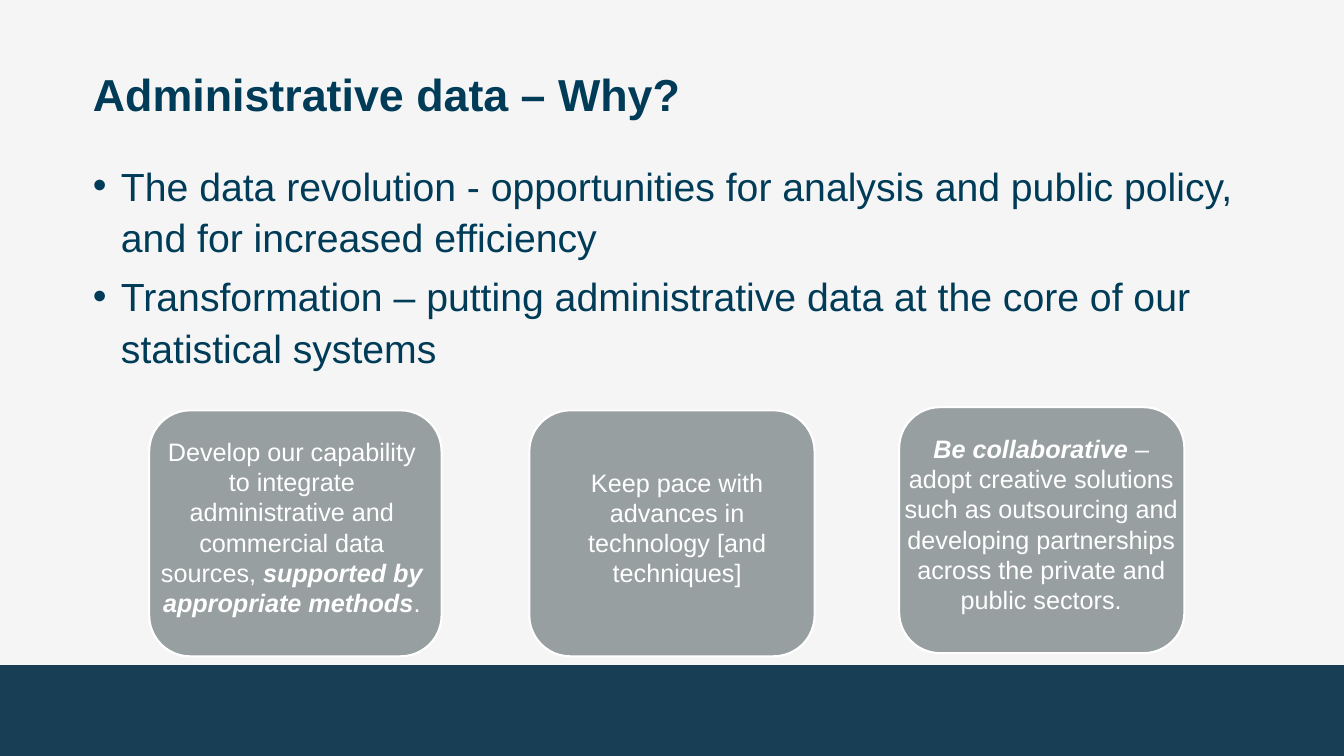
from lxml import etree
from pptx import Presentation
from pptx.dml.color import RGBColor
from pptx.enum.shapes import MSO_SHAPE
from pptx.enum.text import MSO_ANCHOR, MSO_AUTO_SIZE, PP_ALIGN
from pptx.oxml.ns import qn
from pptx.util import Cm, Pt

RECTANGLE = MSO_SHAPE.RECTANGLE
ROUNDED_RECTANGLE = MSO_SHAPE.ROUNDED_RECTANGLE
TOP = MSO_ANCHOR.TOP
NO_AUTOFIT = MSO_AUTO_SIZE.NONE
LEFT = PP_ALIGN.LEFT
CENTER = PP_ALIGN.CENTER

SLIDE_WIDTH, SLIDE_HEIGHT = 33.87, 19.05
BACKGROUND, NAVY, FOOTER, GREY, WHITE = "F5F5F6", "003B57", "183E56", "989FA1", "FFFFFF"

TITLE_FONT = {"name": "Arial", "size": Pt(32), "bold": True}
BULLET_FONT = {"name": "Arial", "size": Pt(28)}
CARD_FONT = {"name": "Arial", "size": Pt(18)}
EMPHASIS = {"bold": True, "italic": True}
NO_MARGINS = {"margin_left": 0, "margin_top": 0, "margin_right": 0, "margin_bottom": 0}
FRAME = {"word_wrap": True, "auto_size": NO_AUTOFIT, "vertical_anchor": TOP}

BULLETS = [
    "The data revolution - opportunities for analysis and public policy, "
    "and for increased efficiency",
    "Transformation – putting administrative data at the core of our statistical systems",
]

CARDS = [
    {
        "box": (3.76, 10.34, 7.37, 6.2),
        "text_inset": (0, 0.53, 7.19, 5.89),
        "runs": [
            ("Develop our capability to integrate administrative and commercial data sources, ", {}),
            ("supported by appropriate methods", EMPHASIS),
            (".", {}),
        ],
    },
    {
        "box": (13.34, 10.34, 7.19, 6.2),
        "text_inset": (0.46, 1.3, 6.53, 4.37),
        "runs": [("Keep pace with advances in technology [and techniques]", {})],
    },
    {
        "box": (22.66, 10.26, 7.19, 6.2),
        "text_inset": (-0.13, 0.53, 7.42, 5.89),
        "runs": [
            ("Be collaborative ", EMPHASIS),
            ("– adopt creative solutions such as outsourcing and developing "
             "partnerships across the private and public sectors.", {}),
        ],
    },
]


def color(value):
    """Turn a hex string into a colour."""
    return RGBColor.from_string(value)


def apply(target, values):
    """Set every attribute in a dict on the target."""
    for name, value in values.items():
        setattr(target, name, value)


def format_font(font, values, hex_color):
    """Set the properties and colour of a font."""
    apply(font, values)
    font.color.rgb = color(hex_color)


def add_panel(slide, shape_type, box, fill, line=None):
    """Add a filled shape, outlined if a line colour is given."""
    shape = slide.shapes.add_shape(shape_type, *map(Cm, box))
    shape.shadow.inherit = False
    shape.fill.solid()
    shape.fill.fore_color.rgb = color(fill)
    if line:
        shape.line.color.rgb = color(line)
        shape.line.width = Pt(1.5)
    else:
        shape.line.fill.background()


def add_text_box(slide, box, frame_format):
    """Add a wrapping text box and return its text frame."""
    text_frame = slide.shapes.add_textbox(*map(Cm, box)).text_frame
    apply(text_frame, FRAME | frame_format)
    return text_frame


def add_title(slide, text, box):
    """Place and format the title placeholder."""
    title = slide.shapes.title
    apply(title, dict(zip(("left", "top", "width", "height"), map(Cm, box))))
    apply(title.text_frame, FRAME | NO_MARGINS)
    title.text_frame.text = text
    paragraph = title.text_frame.paragraphs[0]
    apply(paragraph, {"alignment": LEFT, "line_spacing": 0.95,
                      "space_before": Pt(0), "space_after": Pt(10)})
    format_font(paragraph.runs[0].font, TITLE_FONT, NAVY)


def add_bullets(slide, texts, box):
    """Add a bulleted list filling the box."""
    text_frame = add_text_box(slide, box, NO_MARGINS)
    for index, text in enumerate(texts):
        paragraph = text_frame.add_paragraph() if index else text_frame.paragraphs[0]
        apply(paragraph, {"line_spacing": 1.1, "space_after": Pt(5)})
        properties = paragraph._p.get_or_add_pPr()
        properties.set("marL", str(Cm(0.71)))
        properties.set("indent", str(-Cm(0.71)))
        etree.SubElement(properties, qn("a:buFont"), typeface="Arial")
        etree.SubElement(properties, qn("a:buChar"), char="•")
        run = paragraph.add_run()
        run.text = text
        format_font(run.font, BULLET_FONT, NAVY)


def add_card(slide, box, text_inset, runs):
    """Add a rounded card with its text placed relative to the card."""
    add_panel(slide, ROUNDED_RECTANGLE, box, GREY, WHITE)
    left, top = box[:2]
    across, down, width, height = text_inset
    text_frame = add_text_box(slide, (left + across, top + down, width, height), {})
    paragraph = text_frame.paragraphs[0]
    paragraph.alignment = CENTER
    for text, emphasis in runs:
        run = paragraph.add_run()
        run.text = text
        format_font(run.font, CARD_FONT | emphasis, WHITE)


def main():
    """Build the slide and save the presentation."""
    presentation = Presentation()
    presentation.slide_width = Cm(SLIDE_WIDTH)
    presentation.slide_height = Cm(SLIDE_HEIGHT)
    slide = presentation.slides.add_slide(presentation.slide_layouts[5])
    slide.background.fill.solid()
    slide.background.fill.fore_color.rgb = color(BACKGROUND)
    footer_height = 2.29
    add_panel(slide, RECTANGLE,
              (0, SLIDE_HEIGHT - footer_height, SLIDE_WIDTH, footer_height), FOOTER)
    add_title(slide, "Administrative data – Why?", (2.34, 1.78, 29.21, 1.3))
    add_bullets(slide, BULLETS, (2.34, 3.96, 29.21, 7.01))
    for card in CARDS:
        add_card(slide, **card)
    presentation.save("out.pptx")


if __name__ == "__main__":
    main()
